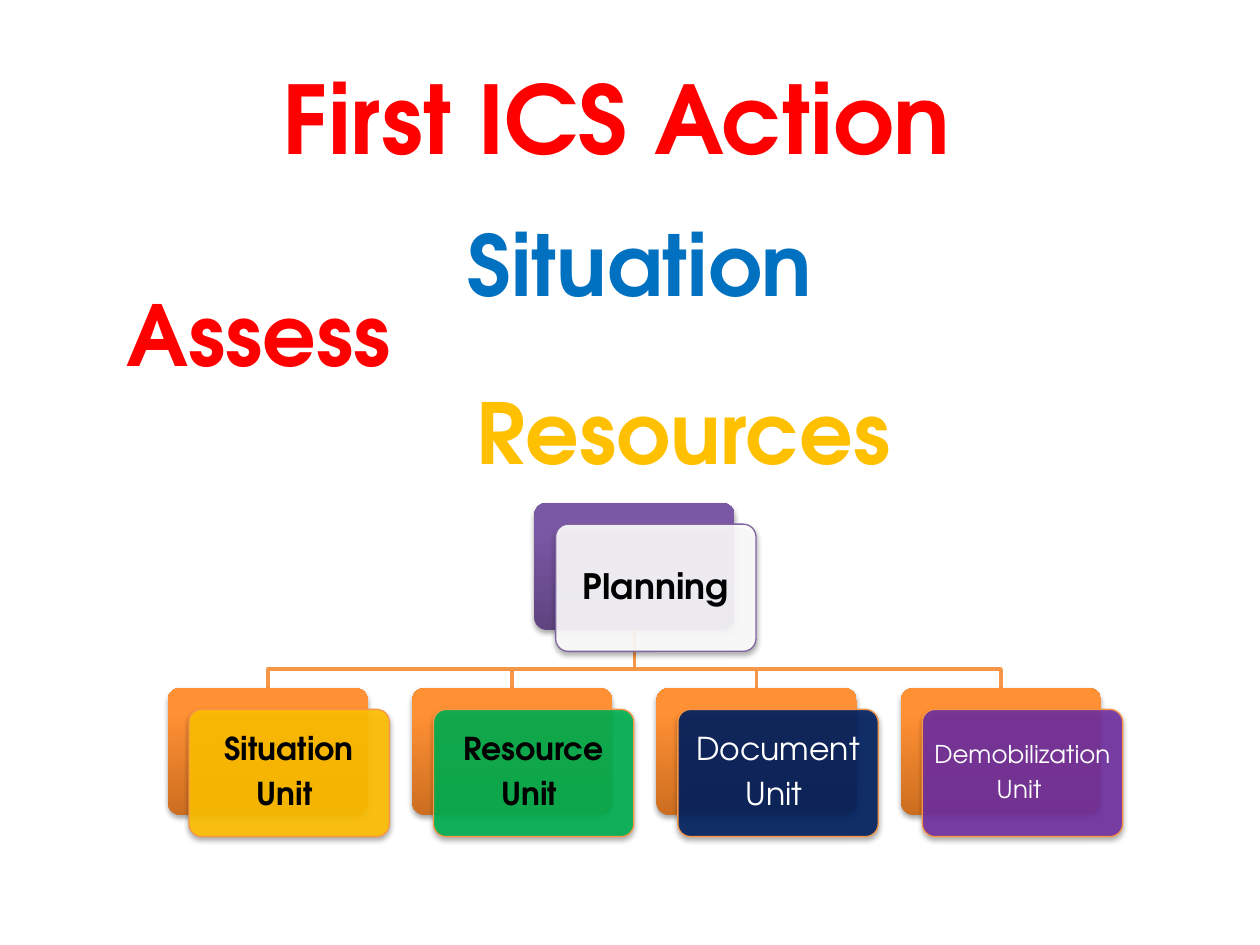
import pptx
import pptx.util
import pptx.dml.color
import pptx.enum.shapes
import pptx.enum.text
import pptx.oxml
import pptx.oxml.ns
import lxml.etree

Inches = pptx.util.Inches
Pt = pptx.util.Pt
RGBColor = pptx.dml.color.RGBColor
CENTER = pptx.enum.text.PP_ALIGN.CENTER
MIDDLE = pptx.enum.text.MSO_ANCHOR.MIDDLE

FONT = "TeX Gyre Adventor"
RED = RGBColor(0xFF, 0x00, 0x00)
BLUE = RGBColor(0x00, 0x70, 0xC0)
GOLD = RGBColor(0xFF, 0xC0, 0x00)
GREEN = RGBColor(0x00, 0xB0, 0x50)
NAVY = RGBColor(0x00, 0x20, 0x60)
VIOLET = RGBColor(0x70, 0x30, 0xA0)
BLACK = RGBColor(0x00, 0x00, 0x00)
WHITE = RGBColor(0xFF, 0xFF, 0xFF)
ORANGE = RGBColor(0xF7, 0x96, 0x46)
PURPLE = RGBColor(0x80, 0x64, 0xA2)
ORANGE_SHADE = (RGBColor(0xCC, 0x6E, 0x20), RGBColor(0xFF, 0x90, 0x34))
PURPLE_SHADE = (RGBColor(0x5F, 0x44, 0x80), RGBColor(0x7B, 0x58, 0xA6))

SHADOW = (
    '<a:effectLst xmlns:a="http://schemas.openxmlformats.org/drawingml/2006/main">'
    '<a:outerShdw blurRad="40000" dist="23000" dir="5400000" rotWithShape="0">'
    '<a:srgbClr val="000000"><a:alpha val="35000"/></a:srgbClr>'
    "</a:outerShdw></a:effectLst>"
)

CARD_WIDTH, CARD_HEIGHT = 1.59, 1.01
OFFSET = 0.17
ROOT_LEFT, ROOT_TOP = 4.24, 3.99
UNIT_LEFT, UNIT_TOP, UNIT_STEP = 1.33, 5.46, 1.94
BRANCH_TOP = 5.31


def write(para, text, size, color, bold):
    para.alignment = CENTER
    span = para.add_run()
    span.text = text
    span.font.name = FONT
    span.font.size = Pt(size)
    span.font.bold = bold
    span.font.color.rgb = color


def add_card(left, top):
    card = slide.shapes.add_shape(
        pptx.enum.shapes.MSO_SHAPE.ROUNDED_RECTANGLE,
        Inches(left), Inches(top), Inches(CARD_WIDTH), Inches(CARD_HEIGHT))
    card.adjustments[0] = 0.1
    card.line.fill.background()
    card._element.spPr.append(pptx.oxml.parse_xml(SHADOW))
    return card


deck = pptx.Presentation()
deck.slide_width = Inches(10)
deck.slide_height = Inches(7.5)
slide = deck.slides.add_slide(deck.slide_layouts[5])

title = slide.shapes.title
title.left, title.top = Inches(0.5), Inches(0.3)
title.width, title.height = Inches(9), Inches(1.25)
title.text_frame.vertical_anchor = MIDDLE
write(title.text_frame.paragraphs[0], "First ICS Action ", 54, RED, True)

words = [
    ("Assess", 0.37, 2.19, 3.36, RED),
    ("Situation", 3.4, 1.64, 3.36, BLUE),
    ("Resources", 3.59, 2.97, 3.67, GOLD),
]
for text, left, top, width, color in words:
    box = slide.shapes.add_textbox(Inches(left), Inches(top), Inches(width), Inches(0.91))
    box.text_frame.word_wrap = True
    write(box.text_frame.paragraphs[0], text, 48, color, True)

units = [
    (["Situation", "Unit "], 18, GOLD, BLACK, True, 0.07),
    (["Resource", "Unit "], 18, GREEN, BLACK, True, 0.07),
    (["Document", "Unit "], 18, NAVY, WHITE, False, 0.07),
    (["Demobilization", "Unit "], 14, VIOLET, WHITE, False, 0.05),
]
cards = [(ROOT_LEFT, ROOT_TOP, PURPLE_SHADE, PURPLE,
          (["Planning"], 20, WHITE, BLACK, True, 0.08))]
for index, unit in enumerate(units):
    cards.append((UNIT_LEFT + index * UNIT_STEP, UNIT_TOP, ORANGE_SHADE, ORANGE, unit))

root_center = ROOT_LEFT + CARD_WIDTH / 2
for left, top, *_ in reversed(cards[1:]):
    center = left + CARD_WIDTH / 2
    builder = slide.shapes.build_freeform(
        Inches(root_center), Inches(ROOT_TOP + CARD_HEIGHT))
    builder.add_line_segments(
        [(Inches(root_center), Inches(BRANCH_TOP)),
         (Inches(center), Inches(BRANCH_TOP)),
         (Inches(center), Inches(top))], close=False)
    branch = builder.convert_to_shape()
    branch.shadow.inherit = False
    branch.fill.background()
    branch.line.color.rgb = ORANGE
    branch.line.width = Pt(2)

for left, top, shade, outline, (lines, size, fill, ink, bold, margin) in cards:
    back = add_card(left, top)
    back.fill.gradient()
    back.fill.gradient_angle = 90
    for stop, color, position in zip(back.fill.gradient_stops, shade, (0, 0.8)):
        stop.color.rgb = color
        stop.position = position

    front = add_card(left + OFFSET, top + OFFSET)
    front.fill.solid()
    front.fill.fore_color.rgb = fill
    fill_color = front._element.spPr.find(
        pptx.oxml.ns.qn("a:solidFill") + "/" + pptx.oxml.ns.qn("a:srgbClr"))
    lxml.etree.SubElement(fill_color, pptx.oxml.ns.qn("a:alpha"), val="90000")
    front.line.color.rgb = outline
    front.line.width = Pt(0.75)

    frame = front.text_frame
    frame.word_wrap = True
    frame.vertical_anchor = MIDDLE
    frame.margin_left = frame.margin_right = Inches(margin)
    frame.margin_top = frame.margin_bottom = Inches(margin)
    for number, text in enumerate(lines):
        para = frame.add_paragraph() if number else frame.paragraphs[0]
        para.line_spacing = 0.9
        para.space_after = Pt(size * 0.35)
        write(para, text, size, ink, bold)

deck.save("out.pptx")
